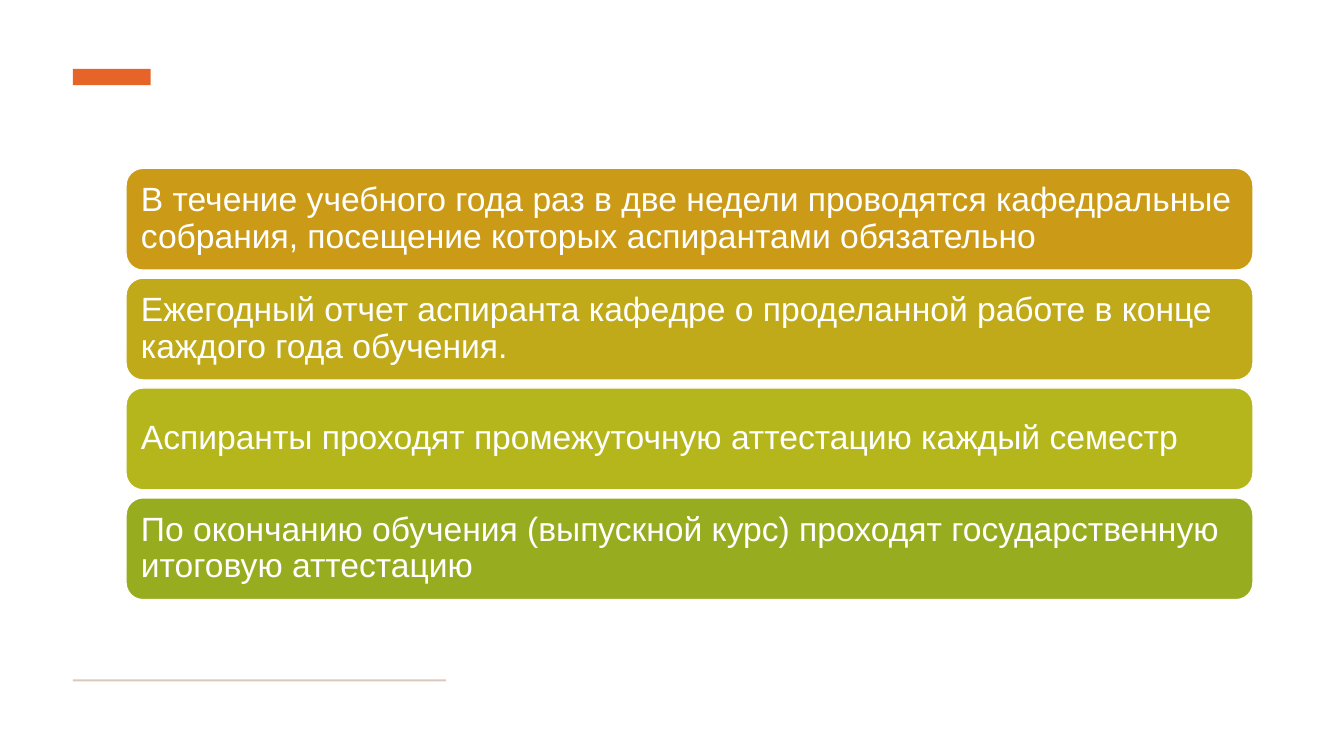
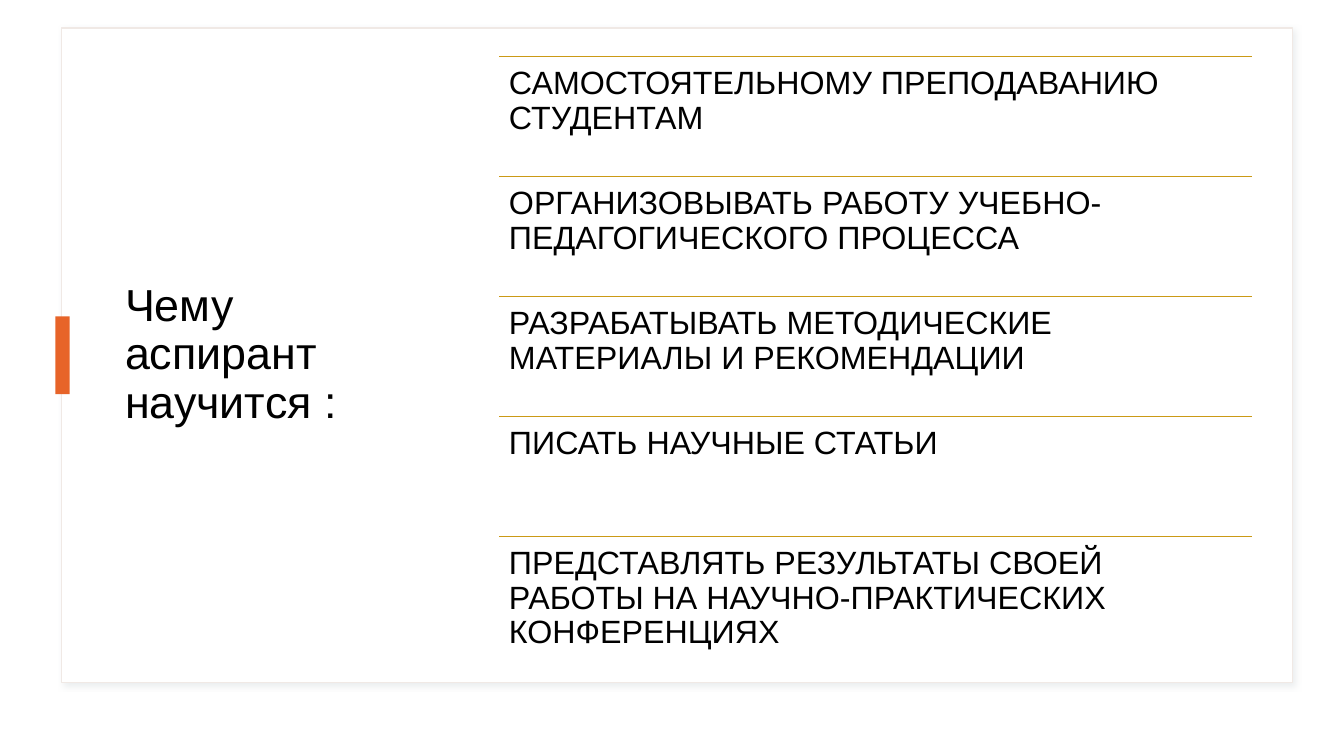
"""Build two slides on the duties and skills of postgraduate students."""
from dataclasses import dataclass

import pptx
import pptx.util
import pptx.dml.color
import pptx.enum.shapes
import pptx.enum.text
import pptx.oxml
import pptx.oxml.ns
from lxml import etree


@dataclass(frozen=True)
class Theme:
    font: str = "Arial"
    title_size: int = 32
    bar_size: int = 24
    list_size: int = 23
    white: str = "FFFFFF"
    black: str = "000000"
    accent: str = "E76429"
    rule: str = "CB9A16"
    footer: str = "DBC8BD"
    border: str = "F0E9E5"
    shadow: str = "BCC5CA"
    bars: tuple = ("CB9A16", "C0AA19", "B5B61C", "98AC1F")


T = Theme()
RGB = pptx.dml.color.RGBColor.from_string
SHAPE = pptx.enum.shapes.MSO_SHAPE
ANCHOR = pptx.enum.text.MSO_ANCHOR
A = pptx.oxml.ns.nsdecls("a")

prs = pptx.Presentation()
prs.slide_width = pptx.util.Inches(13.33)
prs.slide_height = pptx.util.Inches(7.5)
COL = prs.slide_width / 100
ROW = prs.slide_height / 100


def add_box(s, kind, left, top, width, height, fill, line=None):
    """Add a filled shape placed in percent of the slide."""
    sp = s.shapes.add_shape(kind, int(left * COL), int(top * ROW),
                            int(width * COL), int(height * ROW))
    sp.shadow.inherit = False
    sp.fill.solid()
    sp.fill.fore_color.rgb = RGB(fill)
    if line:
        sp.line.color.rgb = RGB(line)
        sp.line.width = pptx.util.Pt(1)
    else:
        sp.line.fill.background()
    return sp


def set_text(sp, text, size, color, anchor):
    """Fill a shape with one left-aligned paragraph."""
    tf = sp.text_frame
    tf.text = text
    tf.word_wrap = True
    tf.auto_size = pptx.enum.text.MSO_AUTO_SIZE.NONE
    tf.vertical_anchor = anchor
    tf.margin_left = tf.margin_right = pptx.util.Inches(0.1)
    tf.margin_top = tf.margin_bottom = pptx.util.Inches(0.1)
    p = tf.paragraphs[0]
    p.alignment = pptx.enum.text.PP_ALIGN.LEFT
    p.line_spacing = 0.9
    r = p.runs[0]
    r.font.name = T.font
    r.font.size = pptx.util.Pt(size)
    r.font.color.rgb = RGB(color)


duties = [
    "В течение учебного года раз в две недели проводятся кафедральные "
    "собрания, посещение которых аспирантами обязательно",
    "Ежегодный отчет аспиранта кафедре о проделанной работе в конце "
    "каждого года обучения.",
    "Аспиранты проходят промежуточную аттестацию каждый семестр",
    "По окончанию обучения (выпускной курс) проходят государственную "
    "итоговую аттестацию",
]
s = prs.slides.add_slide(prs.slide_layouts[6])
add_box(s, SHAPE.RECTANGLE, 5.43, 9.13, 5.78, 2.13, T.accent)
add_box(s, SHAPE.RECTANGLE, 5.43, 89.87, 27.75, 0.27, T.footer)
for i, (duty, color) in enumerate(zip(duties, T.bars)):
    sp = add_box(s, SHAPE.ROUNDED_RECTANGLE, 9.38, 22.27 + 14.53 * i,
                 83.85, 13.47, color, T.white)
    set_text(sp, duty, T.bar_size, T.white, ANCHOR.MIDDLE)

skills = [
    "САМОСТОЯТЕЛЬНОМУ ПРЕПОДАВАНИЮ СТУДЕНТАМ",
    "ОРГАНИЗОВЫВАТЬ РАБОТУ УЧЕБНО-ПЕДАГОГИЧЕСКОГО ПРОЦЕССА",
    "РАЗРАБАТЫВАТЬ МЕТОДИЧЕСКИЕ МАТЕРИАЛЫ И РЕКОМЕНДАЦИИ",
    "ПИСАТЬ НАУЧНЫЕ СТАТЬИ",
    "ПРЕДСТАВЛЯТЬ РЕЗУЛЬТАТЫ СВОЕЙ РАБОТЫ НА НАУЧНО-ПРАКТИЧЕСКИХ "
    "КОНФЕРЕНЦИЯХ",
]
s = prs.slides.add_slide(prs.slide_layouts[5])
title = s.shapes.title
title.left, title.width = int(8.55 * COL), int(24.53 * COL)
title.top, title.height = int(7.33 * ROW), int(79.33 * ROW)
set_text(title, "Чему аспирант научится :", T.title_size, T.black, ANCHOR.MIDDLE)

frame = add_box(s, SHAPE.RECTANGLE, 4.58, 3.73, 91.58, 86.53, T.white, T.border)
effects = frame._element.spPr.find(pptx.oxml.ns.qn("a:effectLst"))
effects.append(pptx.oxml.parse_xml(
    f'<a:outerShdw {A} blurRad="{pptx.util.Pt(4)}" dist="{pptx.util.Pt(3)}" '
    f'dir="2700000" algn="tl" rotWithShape="0"><a:srgbClr val="{T.shadow}">'
    '<a:alpha val="30000"/></a:srgbClr></a:outerShdw>'))
title._element.addprevious(frame._element)
add_box(s, SHAPE.RECTANGLE, 4.13, 41.87, 1.05, 10.27, T.accent)

left, width, step = int(37.13 * COL), int(56.03 * COL), 15.87 * ROW
for i, skill in enumerate(skills):
    top = int(7.47 * ROW + i * step)
    line = s.shapes.add_connector(pptx.enum.shapes.MSO_CONNECTOR.STRAIGHT,
                                  left, top, left + width, top)
    line.line.color.rgb = RGB(T.rule)
    line.line.width = pptx.util.Pt(1)
    etree.SubElement(line._element.spPr, pptx.oxml.ns.qn("a:effectLst"))
    sp = s.shapes.add_textbox(left, top, width, int(step))
    set_text(sp, skill, T.list_size, T.black, ANCHOR.TOP)

prs.save("out.pptx")
